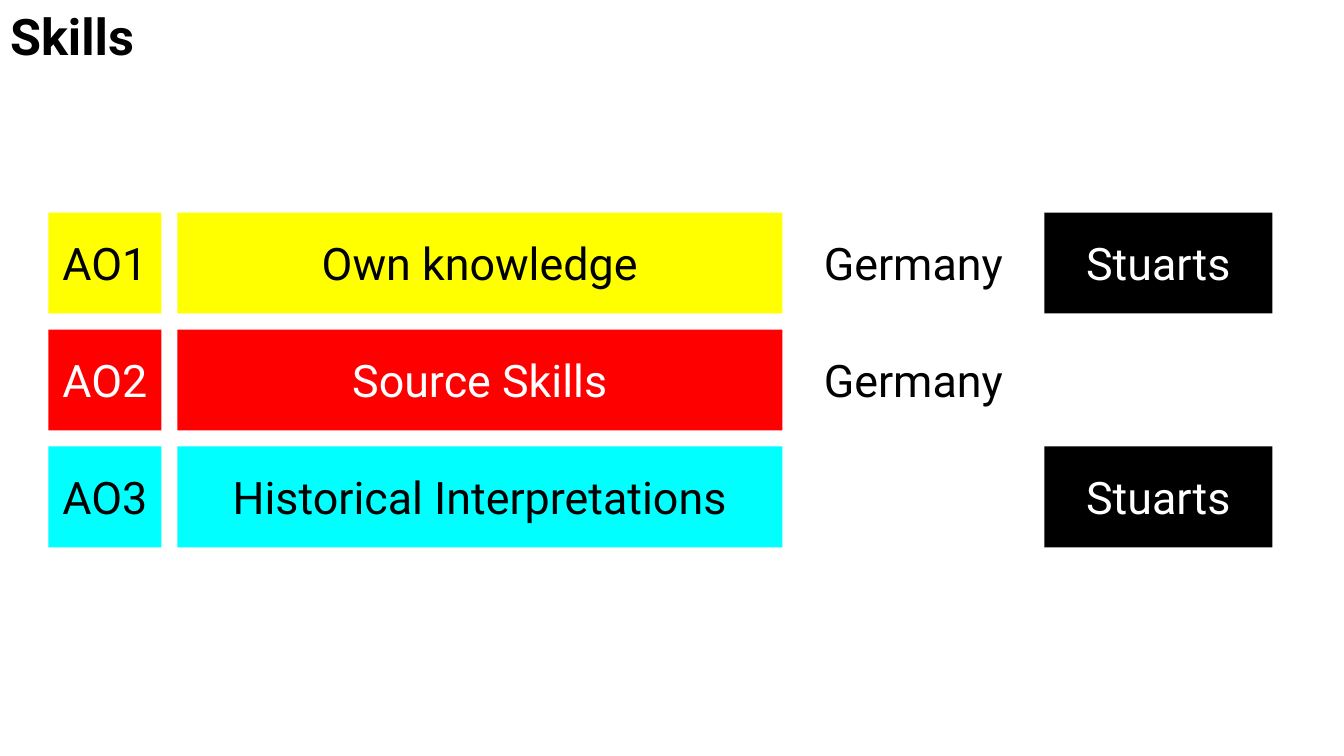
from pptx import Presentation
from pptx.dml.color import RGBColor
from pptx.enum.shapes import MSO_SHAPE
from pptx.enum.text import MSO_ANCHOR, MSO_AUTO_SIZE, PP_ALIGN
from pptx.util import Inches, Pt

RECT = MSO_SHAPE.RECTANGLE
LEFT, CENTER = PP_ALIGN.LEFT, PP_ALIGN.CENTER
TOP, MIDDLE = MSO_ANCHOR.TOP, MSO_ANCHOR.MIDDLE
BLACK, WHITE = "000000", "FFFFFF"
YELLOW, RED, CYAN = "FFFF00", "FF0000", "00FFFF"


def color(value):
    return RGBColor.from_string(value)


def write(shape, text, size=32, ink=BLACK, bold=False, align=CENTER, anchor=MIDDLE):
    frame = shape.text_frame
    frame.word_wrap = True
    frame.auto_size = MSO_AUTO_SIZE.NONE
    frame.vertical_anchor = anchor
    line = frame.paragraphs[0]
    line.alignment = align
    run = line.add_run()
    run.text = text
    run.font.name = "Roboto"
    run.font.size = Pt(size)
    run.font.bold = bold
    run.font.color.rgb = color(ink)


deck = Presentation()
deck.slide_width, deck.slide_height = Inches(13.33), Inches(7.5)
slide = deck.slides.add_slide(deck.slide_layouts[5])

# Title
title = slide.shapes.title
title.left, title.top = Inches(0), Inches(0)
title.width, title.height = Inches(9.91), Inches(0.71)
title.fill.solid()
title.fill.fore_color.rgb = color(WHITE)
write(title, "Skills", size=36, bold=True, align=LEFT, anchor=TOP)

# Column positions: left, width
cols = [(0.48, 1.12), (1.76, 6), (7.93, 2.26), (10.36, 2.26)]
first, pitch, height = 2.11, 1.16, 1

# One row per objective: code, skill, fill, ink, units that test it
rows = [
    ("AO1", "Own knowledge", YELLOW, BLACK, "Germany", "Stuarts"),
    ("AO2", "Source Skills", RED, WHITE, "Germany", ""),
    ("AO3", "Historical Interpretations", CYAN, BLACK, "", "Stuarts"),
]

for i, (code, skill, fill, ink, early, late) in enumerate(rows):
    cells = [(code, fill, ink), (skill, fill, ink),
             (early, WHITE, BLACK), (late, BLACK, WHITE)]
    for (left, width), (text, back, fore) in zip(cols, cells):
        if not text:
            continue
        box = slide.shapes.add_shape(RECT, Inches(left), Inches(first + i * pitch),
                                     Inches(width), Inches(height))
        box.shadow.inherit = False
        box.fill.solid()
        box.fill.fore_color.rgb = color(back)
        box.line.fill.background()
        write(box, text, ink=fore)

deck.save("out.pptx")
